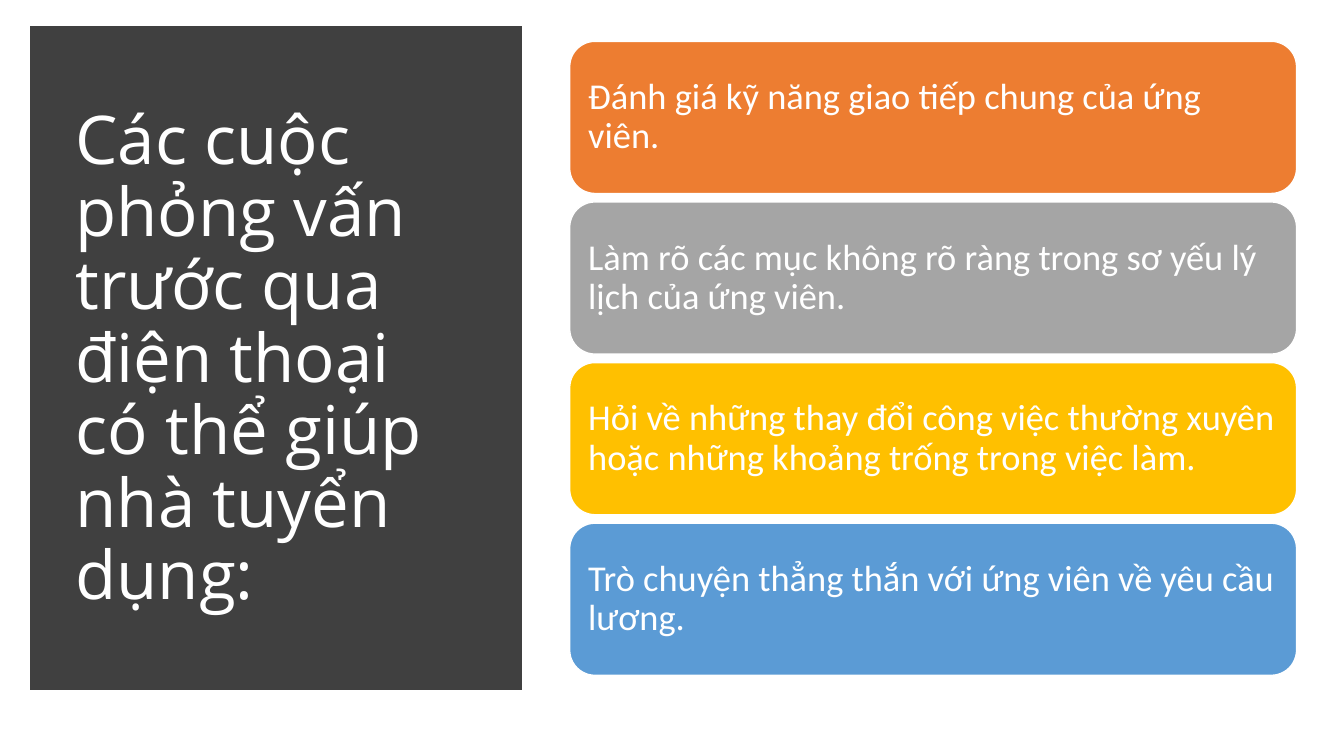
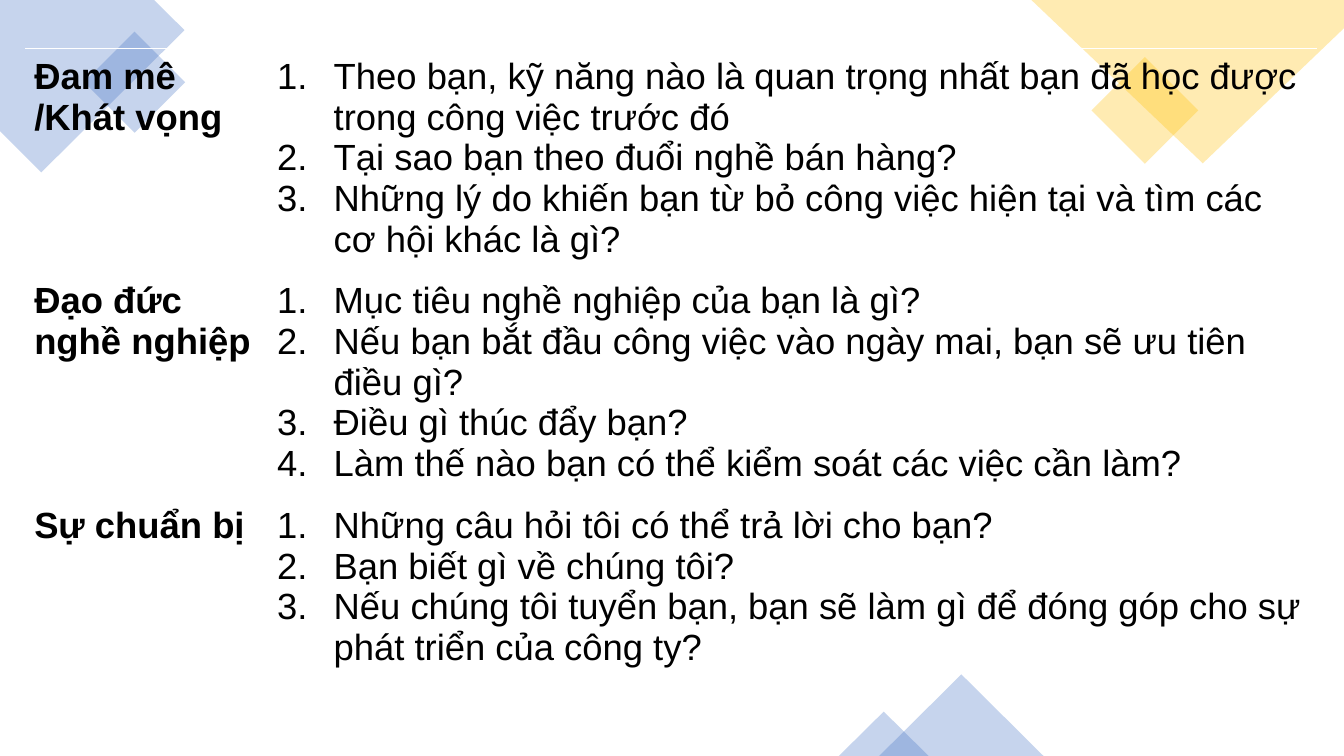
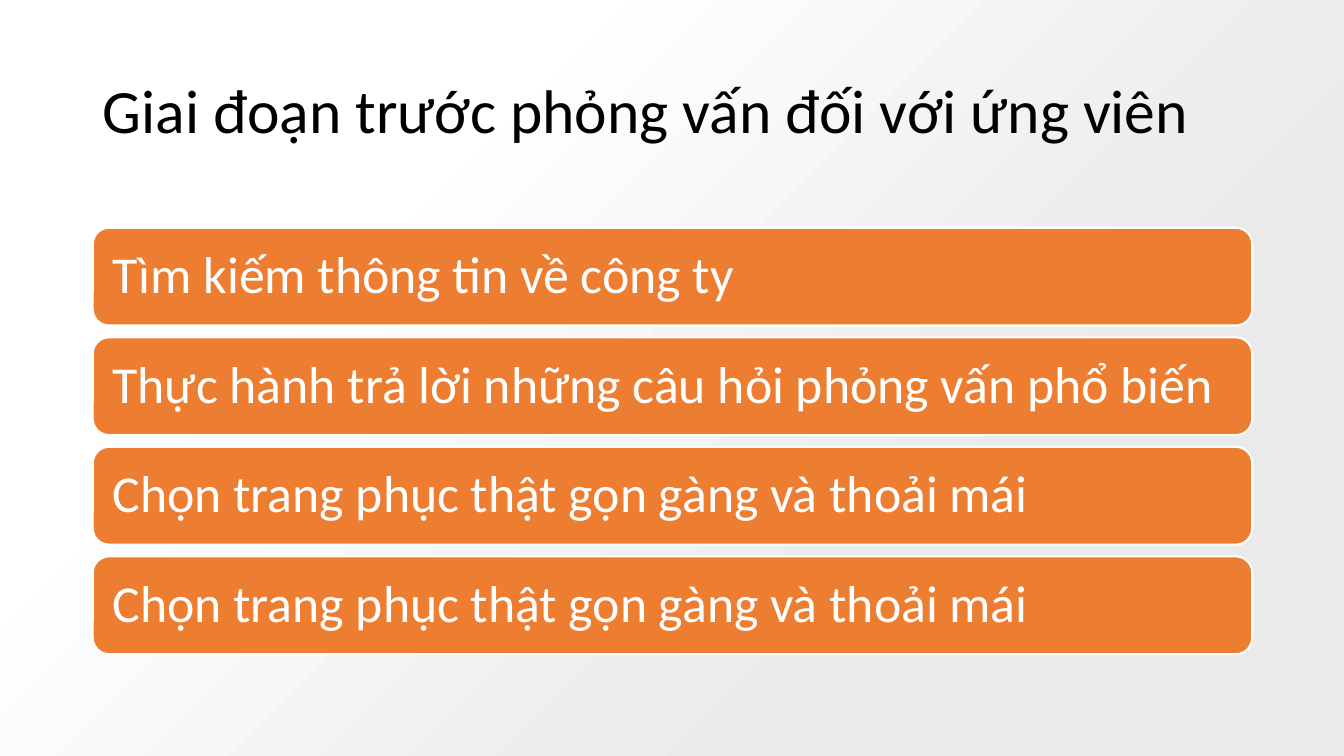
from dataclasses import dataclass
from typing import Optional

from lxml import etree
from pptx import Presentation
from pptx.dml.color import RGBColor
from pptx.enum.shapes import MSO_SHAPE
from pptx.enum.text import MSO_ANCHOR, MSO_AUTO_SIZE, PP_ALIGN
from pptx.oxml.ns import qn
from pptx.util import Inches, Pt

RECTANGLE = MSO_SHAPE.RECTANGLE
ROUNDED = MSO_SHAPE.ROUNDED_RECTANGLE
TRIANGLE = MSO_SHAPE.ISOSCELES_TRIANGLE
TOP, MIDDLE = MSO_ANCHOR.TOP, MSO_ANCHOR.MIDDLE
LEFT = PP_ALIGN.LEFT
NO_AUTOFIT = MSO_AUTO_SIZE.NONE
TITLE_ONLY, BLANK = 5, 6
NO_TABLE_STYLE = "{2D5ABB26-0587-4C30-8999-92F81FD0307C}"


@dataclass(frozen=True)
class Theme:
    white: str = "FFFFFF"
    black: str = "000000"
    charcoal: str = "404040"
    mist: str = "EBEAEA"
    orange: str = "ED7D31"
    gray: str = "A5A5A5"
    gold: str = "FFC000"
    sky: str = "5B9BD5"
    blue: str = "4472C4"
    body_font: str = "Calibri"
    panel_font: str = "Open Sans"
    table_font: str = "Arial"
    panel_title_size: float = 48
    title_size: float = 44
    large_card_size: float = 37
    body_size: float = 26
    line_spacing: float = 0.9
    decoration_opacity: int = 30


THEME = Theme()


@dataclass(frozen=True)
class Box:
    left: float
    top: float
    width: float
    height: float

    def lengths(self):
        return [Inches(v) for v in (self.left, self.top, self.width, self.height)]


@dataclass(frozen=True)
class TextStyle:
    font: str
    size: float
    color: str
    bold: bool = False


@dataclass(frozen=True)
class Card:
    text: str
    color: str


@dataclass(frozen=True)
class CardStack:
    area: Box
    card_height: float
    inset: float
    size: float
    border: float


@dataclass(frozen=True)
class Decoration:
    kind: MSO_SHAPE
    box: Box
    color: str
    rotation: float = 0


@dataclass(frozen=True)
class Outline:
    points: tuple
    color: str


@dataclass(frozen=True)
class Topic:
    name: str
    questions: tuple
    height: float


# Shared drawing functions
def write(paragraph, text: str, style: TextStyle, spacing: float = 1.0) -> None:
    paragraph.alignment = LEFT
    paragraph.line_spacing = spacing
    run = paragraph.add_run()
    run.text = text
    run.font.name = style.font
    run.font.size = Pt(style.size)
    run.font.bold = style.bold
    run.font.color.rgb = RGBColor.from_string(style.color)


def paint(shape, color: str, opacity: int = 100,
          line: Optional[str] = None, line_width: float = 1) -> None:
    shape.shadow.inherit = False
    shape.fill.solid()
    shape.fill.fore_color.rgb = RGBColor.from_string(color)
    if opacity < 100:
        fill_color = shape.element.spPr.find(qn("a:solidFill"))[0]
        etree.SubElement(fill_color, qn("a:alpha"), val=str(opacity * 1000))
    if line is None:
        shape.line.fill.background()
    else:
        shape.line.color.rgb = RGBColor.from_string(line)
        shape.line.width = Pt(line_width)


def set_title(slide, text: str, box: Box, style: TextStyle) -> None:
    title = slide.shapes.title
    title.left, title.top, title.width, title.height = box.lengths()
    title.element.getparent().append(title.element)  # bring to the front
    frame = title.text_frame
    frame.word_wrap = True
    frame.auto_size = NO_AUTOFIT
    frame.vertical_anchor = MIDDLE
    write(frame.paragraphs[0], text, style, THEME.line_spacing)


def draw_cards(slide, cards: list[Card], stack: CardStack) -> None:
    area = stack.area
    pitch = (area.height - stack.card_height) / (len(cards) - 1)
    style = TextStyle(THEME.body_font, stack.size, THEME.white)
    for index, card in enumerate(cards):
        box = Box(area.left, area.top + index * pitch, area.width, stack.card_height)
        shape = slide.shapes.add_shape(ROUNDED, *box.lengths())
        paint(shape, card.color, line=THEME.white, line_width=stack.border)
        frame = shape.text_frame
        frame.word_wrap = True
        frame.vertical_anchor = MIDDLE
        frame.margin_left = frame.margin_right = Inches(stack.inset)
        frame.margin_top = frame.margin_bottom = Inches(stack.inset)
        write(frame.paragraphs[0], card.text, style, THEME.line_spacing)


def draw_decoration(slide, item: Decoration) -> None:
    shape = slide.shapes.add_shape(item.kind, *item.box.lengths())
    shape.rotation = item.rotation
    paint(shape, item.color, THEME.decoration_opacity)


def draw_outline(slide, outline: Outline) -> None:
    points = [(Inches(x), Inches(y)) for x, y in outline.points]
    builder = slide.shapes.build_freeform(*points[0])
    builder.add_line_segments(points[1:], close=True)
    paint(builder.convert_to_shape(), outline.color, THEME.decoration_opacity)


# Table helpers
def number_paragraph(paragraph) -> None:
    properties = paragraph._p.get_or_add_pPr()
    properties.set("marL", str(Inches(0.56)))
    properties.set("indent", str(-Inches(0.56)))
    etree.SubElement(properties, qn("a:buFont"), typeface="+mj-lt")
    etree.SubElement(properties, qn("a:buAutoNum"), type="arabicPeriod")


def add_border(cell, side: str) -> None:
    border = etree.Element(qn(f"a:{side}"), w=str(Pt(1)))
    fill = etree.SubElement(border, qn("a:solidFill"))
    etree.SubElement(fill, qn("a:srgbClr"), val=THEME.white)
    cell._tc.get_or_add_tcPr().insert(0, border)


def fill_cell(cell, lines: tuple, style: TextStyle, numbered: bool) -> None:
    cell.fill.background()
    cell.vertical_anchor = TOP
    cell.margin_left, cell.margin_top = Inches(0.09), Inches(0.08)
    cell.margin_right, cell.margin_bottom = Inches(0.07), Inches(0.13)
    frame = cell.text_frame
    for index, line in enumerate(lines):
        paragraph = frame.add_paragraph() if index else frame.paragraphs[0]
        write(paragraph, line, style)
        if numbered:
            number_paragraph(paragraph)


def draw_topics(slide, topics: list[Topic]) -> None:
    box = Box(0.25, 0.48, 12.81, sum(topic.height for topic in topics))
    table = slide.shapes.add_table(len(topics), 2, *box.lengths()).table
    table.first_row = table.horz_banding = False
    table._tbl.tblPr.find(qn("a:tableStyleId")).text = NO_TABLE_STYLE
    for column, width in zip(table.columns, (2.41, 10.4)):
        column.width = Inches(width)
    name_style = TextStyle(THEME.table_font, THEME.body_size, THEME.black, bold=True)
    question_style = TextStyle(THEME.table_font, THEME.body_size, THEME.black)
    for index, topic in enumerate(topics):
        table.rows[index].height = Inches(topic.height)
        fill_cell(table.cell(index, 0), (topic.name,), name_style, False)
        fill_cell(table.cell(index, 1), topic.questions, question_style, True)
    for column in range(2):
        add_border(table.cell(0, column), "lnT")
        add_border(table.cell(1, column), "lnB")


# Slides
def add_phone_slide(presentation) -> None:
    slide = presentation.slides.add_slide(presentation.slide_layouts[TITLE_ONLY])
    panel = slide.shapes.add_shape(RECTANGLE, *Box(0.37, 0.33, 4.74, 6.45).lengths())
    paint(panel, THEME.charcoal, line=THEME.charcoal, line_width=10)
    etree.SubElement(panel.element.spPr.find(qn("a:ln")), qn("a:miter"), lim="800000")
    set_title(
        slide,
        "Các cuộc phỏng vấn trước qua điện thoại có thể giúp nhà tuyển dụng:",
        Box(0.65, 0.7, 4.16, 5.75),
        TextStyle(THEME.panel_font, THEME.panel_title_size, THEME.white),
    )
    cards = [
        Card("Đánh giá kỹ năng giao tiếp chung của ứng viên.", THEME.orange),
        Card("Làm rõ các mục không rõ ràng trong sơ yếu lý lịch của ứng viên.", THEME.gray),
        Card("Hỏi về những thay đổi công việc thường xuyên hoặc những khoảng trống "
             "trong việc làm.", THEME.gold),
        Card("Trò chuyện thẳng thắn với ứng viên về yêu cầu lương.", THEME.sky),
    ]
    draw_cards(slide, cards,
               CardStack(Box(5.65, 0.41, 7.21, 6.29), 1.51, 0.11, THEME.body_size, 1))


def add_question_slide(presentation) -> None:
    slide = presentation.slides.add_slide(presentation.slide_layouts[BLANK])
    # Corner decorations
    draw_outline(slide, Outline(
        ((1.53, 0), (0, 0), (0, 1.3), (0.41, 1.71), (1.83, 0.3)), THEME.blue))
    for item in (
        Decoration(RECTANGLE, Box(0.98, 0.46, 0.71, 0.71), THEME.blue, 315),
        Decoration(RECTANGLE, Box(10.98, 0.72, 0.75, 0.75), THEME.gold, 315),
    ):
        draw_decoration(slide, item)
    draw_outline(slide, Outline(
        ((13.33, 0), (10.23, 0), (11.93, 1.62), (13.33, 0.28)), THEME.gold))
    for box in (Box(8.72, 6.69, 1.63, 0.81), Box(8.32, 7.06, 0.89, 0.44)):
        draw_decoration(slide, Decoration(TRIANGLE, box, THEME.blue))
    # Questions by topic
    draw_topics(slide, [
        Topic("Đam mê /Khát vọng", (
            "Theo bạn, kỹ năng nào là quan trọng nhất bạn đã học được trong công việc trước đó",
            "Tại sao bạn theo đuổi nghề bán hàng?",
            "Những lý do khiến bạn từ bỏ công việc hiện tại và tìm các cơ hội khác là gì?",
        ), 1.97),
        Topic("Đạo đức nghề nghiệp", (
            "Mục tiêu nghề nghiệp của bạn là gì?",
            "Nếu bạn bắt đầu công việc vào ngày mai, bạn sẽ ưu tiên điều gì?",
            "Điều gì thúc đẩy bạn?",
            "Làm thế nào bạn có thể kiểm soát các việc cần làm?",
        ), 1.63),
        Topic("Sự chuẩn bị", (
            "Những câu hỏi tôi có thể trả lời cho bạn?",
            "Bạn biết gì về chúng tôi?",
            "Nếu chúng tôi tuyển bạn, bạn sẽ làm gì để đóng góp cho sự phát triển của công ty?",
        ), 1.63),
    ])


def add_candidate_slide(presentation) -> None:
    slide = presentation.slides.add_slide(presentation.slide_layouts[TITLE_ONLY])
    backdrop = slide.shapes.add_shape(RECTANGLE, *Box(0, 0, 13.33, 7.5).lengths())
    paint(backdrop, THEME.white)
    backdrop.fill.gradient()
    backdrop.fill.gradient_angle = 315
    stops = ((0.26, THEME.white), (0.72, THEME.mist))
    for stop, (position, color) in zip(backdrop.fill.gradient_stops, stops):
        stop.position = position
        stop.color.rgb = RGBColor.from_string(color)
    set_title(
        slide,
        "Giai đoạn trước phỏng vấn đối với ứng viên",
        Box(0.92, 0.4, 11.5, 1.45),
        TextStyle(THEME.body_font, THEME.title_size, THEME.black),
    )
    steps = (
        "Tìm kiếm thông tin về công ty",
        "Thực hành trả lời những câu hỏi phỏng vấn phổ biến",
        "Chọn trang phục thật gọn gàng và thoải mái",
        "Chọn trang phục thật gọn gàng và thoải mái",
    )
    draw_cards(slide, [Card(step, THEME.orange) for step in steps],
               CardStack(Box(0.92, 2.26, 11.5, 4.23), 0.97, 0.15,
                         THEME.large_card_size, 1.5))


def main() -> None:
    presentation = Presentation()
    presentation.slide_width = Inches(13.33)
    presentation.slide_height = Inches(7.5)
    add_phone_slide(presentation)
    add_question_slide(presentation)
    add_candidate_slide(presentation)
    presentation.save("out.pptx")


if __name__ == "__main__":
    main()
